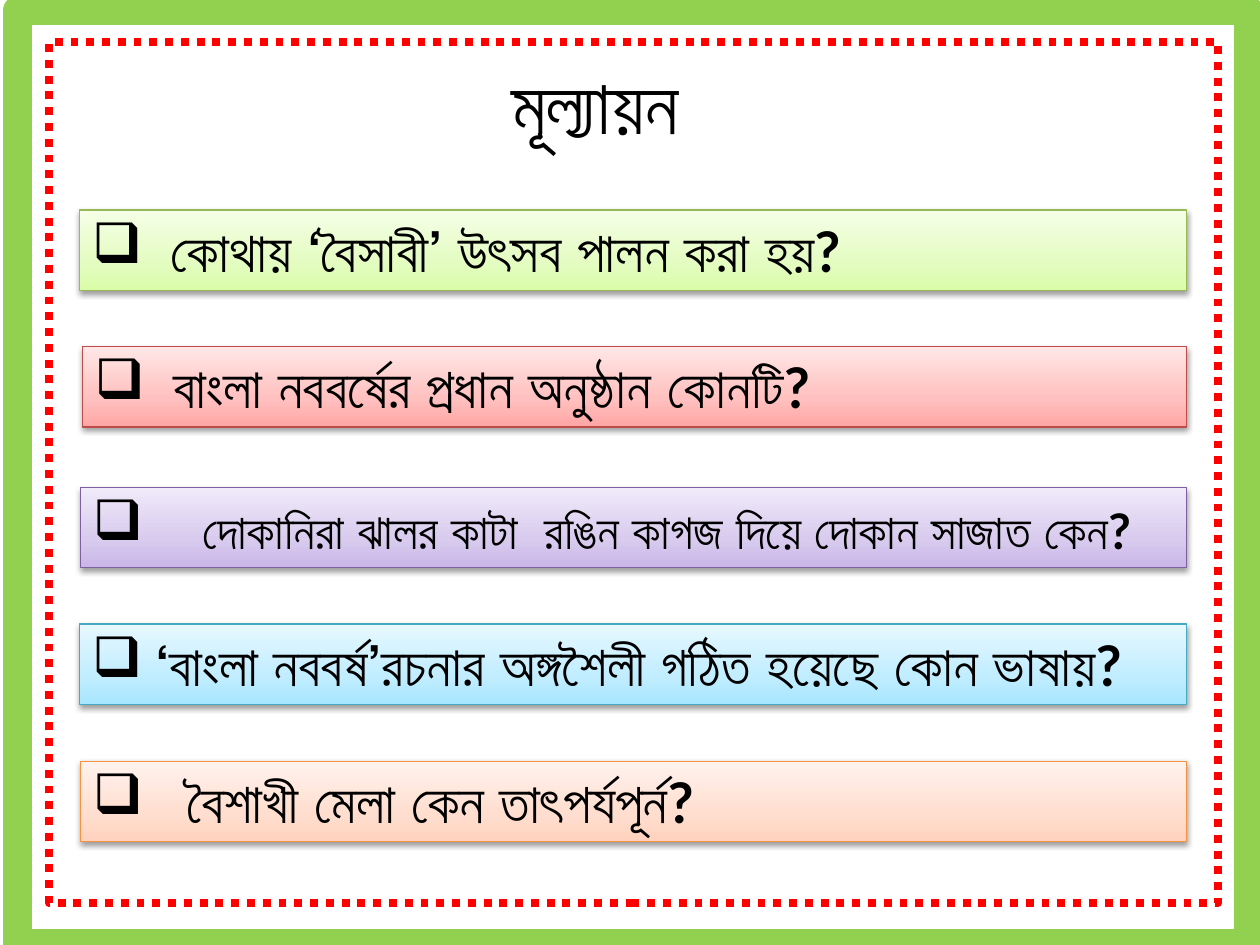
from lxml.etree import SubElement
from pptx import Presentation
from pptx.dml.color import RGBColor as RGB
from pptx.enum.dml import MSO_LINE_DASH_STYLE as DASH
from pptx.enum.shapes import MSO_SHAPE as SHAPE
from pptx.enum.text import MSO_ANCHOR as ANCHOR, MSO_AUTO_SIZE as AUTO, PP_ALIGN as ALIGN
from pptx.oxml.ns import qn
from pptx.util import Pt

TITLE = "মূল্যায়ন"
QUESTIONS = [
    dict(runs=[("কোথায় ‘বৈসাবী’ উৎসব পালন করা হয়?", "body")],
         left=45.5, top=120, indent=45, tone="green"),
    dict(runs=[("বাংলা নববর্ষের প্রধান অনুষ্ঠান কোনটি?", "body")],
         left=47, top=198, indent=45, tone="red"),
    dict(runs=[(" ", "body"), ("দোকানিরা ঝালর কাটা  রঙিন কাগজ দিয়ে দোকান সাজাত কেন?", "small")],
         left=46, top=278.5, indent=54, tone="purple"),
    dict(runs=[("‘বাংলা নববর্ষ’রচনার অঙ্গশৈলী গঠিত হয়েছে কোন ভাষায়?", "body")],
         left=45.5, top=356.5, indent=36, tone="blue"),
    dict(runs=[("বৈশাখী মেলা কেন তাৎপর্যপূর্ন?", "body")],
         left=46, top=435, indent=54, tone="orange"),
]
THEME = dict(
    font="Lato", text="000000", bullet="❑",
    sizes=dict(title=44, body=32, small=28),
    frame="92D050", dots="FF0000",
    tones=dict(
        green=("98B955", "DAFDA7", "E4FCC2", "F5FFE7"),
        red=("BF4C48", "FFA6A5", "FFC0BF", "FFE7E7"),
        purple=("7D60A0", "C9B5E8", "D8CBEE", "F0EAF9"),
        blue=("46AAC5", "A7E6FF", "C1EDFF", "E7F8FF"),
        orange=("F69240", "FFD2BD", "FFDED0", "FFF2ED"),
    ),
)
STOPS = (0, 35, 100)
BAR_RIGHT, BAR_HEIGHT = 678, 46


def add_shape(s, kind, left, top, width, height, line=None, weight=0):
    sp = s.shapes.add_shape(kind, Pt(left), Pt(top), Pt(width), Pt(height))
    sp.shadow.inherit = False
    sp.fill.background()
    if line:
        sp.line.color.rgb = RGB.from_string(line)
        sp.line.width = Pt(weight)
    else:
        sp.line.fill.background()
    return sp


def add_color(parent, color, alpha=None):
    clr = SubElement(parent, qn("a:srgbClr"), val=color)
    if alpha:
        SubElement(clr, qn("a:alpha"), val=str(alpha * 1000))


def add_shadow(effects, blur, dist, angle, alpha):
    shadow = SubElement(effects, qn("a:outerShdw"), blurRad=str(Pt(blur)), dist=str(Pt(dist)),
                        dir=str(angle * 60000), algn="tl", rotWithShape="0")
    add_color(shadow, "000000", alpha)


def add_gradient(sp, colors):
    sp.fill.gradient()
    sp.fill.gradient_angle = 90
    stops = sp._element.spPr.find(".//" + qn("a:gsLst"))
    stops.clear()
    for pos, color in zip(STOPS, colors):
        add_color(SubElement(stops, qn("a:gs"), pos=str(pos * 1000)), color)


def add_run(p, text, size):
    r = p.add_run()
    r.text = text
    r.font.name = THEME["font"]
    r.font.size = Pt(THEME["sizes"][size])
    r.font.bold = True
    r.font.color.rgb = RGB.from_string(THEME["text"])
    return r


def add_frames(s):
    add_shape(s, SHAPE.RECTANGLE, 10, 6, 703.5, 533.5, THEME["frame"], 16.75)
    dotted = add_shape(s, SHAPE.RECTANGLE, 28, 24, 668, 492, THEME["dots"], 4.5)
    dotted.line.dash_style = DASH.ROUND_DOT


def add_title(s):
    sp = add_shape(s, SHAPE.UP_RIBBON, 169, 29.5, 342, 72)
    tf = sp.text_frame
    tf.vertical_anchor = ANCHOR.TOP
    tf.auto_size = AUTO.SHAPE_TO_FIT_TEXT
    p = tf.paragraphs[0]
    p.alignment = ALIGN.CENTER
    r = add_run(p, TITLE, "title")
    effects = r.font._element.makeelement(qn("a:effectLst"))
    r.font._element.find(qn("a:solidFill")).addnext(effects)
    add_shadow(effects, 3, 3, 45, 45)


def add_question(s, runs, left, top, indent, tone):
    line, *colors = THEME["tones"][tone]
    sp = add_shape(s, SHAPE.RECTANGLE, left, top, BAR_RIGHT - left, BAR_HEIGHT, line, 0.75)
    add_gradient(sp, colors)
    add_shadow(sp._element.spPr.find(qn("a:effectLst")), 3.1, 1.6, 90, 38)
    tf = sp.text_frame
    tf.vertical_anchor = ANCHOR.TOP
    tf.auto_size = AUTO.SHAPE_TO_FIT_TEXT
    p = tf.paragraphs[0]
    p.alignment = ALIGN.LEFT
    props = p._p.get_or_add_pPr()
    props.set("marL", str(Pt(indent)))
    props.set("indent", str(-Pt(indent)))
    SubElement(props, qn("a:buChar"), char=THEME["bullet"])
    for text, size in runs:
        add_run(p, text, size)


def main():
    prs = Presentation()
    prs.slide_width, prs.slide_height = Pt(720), Pt(540)
    s = prs.slides.add_slide(prs.slide_layouts[6])
    add_frames(s)
    add_title(s)
    for question in QUESTIONS:
        add_question(s, **question)
    prs.save("out.pptx")


if __name__ == "__main__":
    main()
